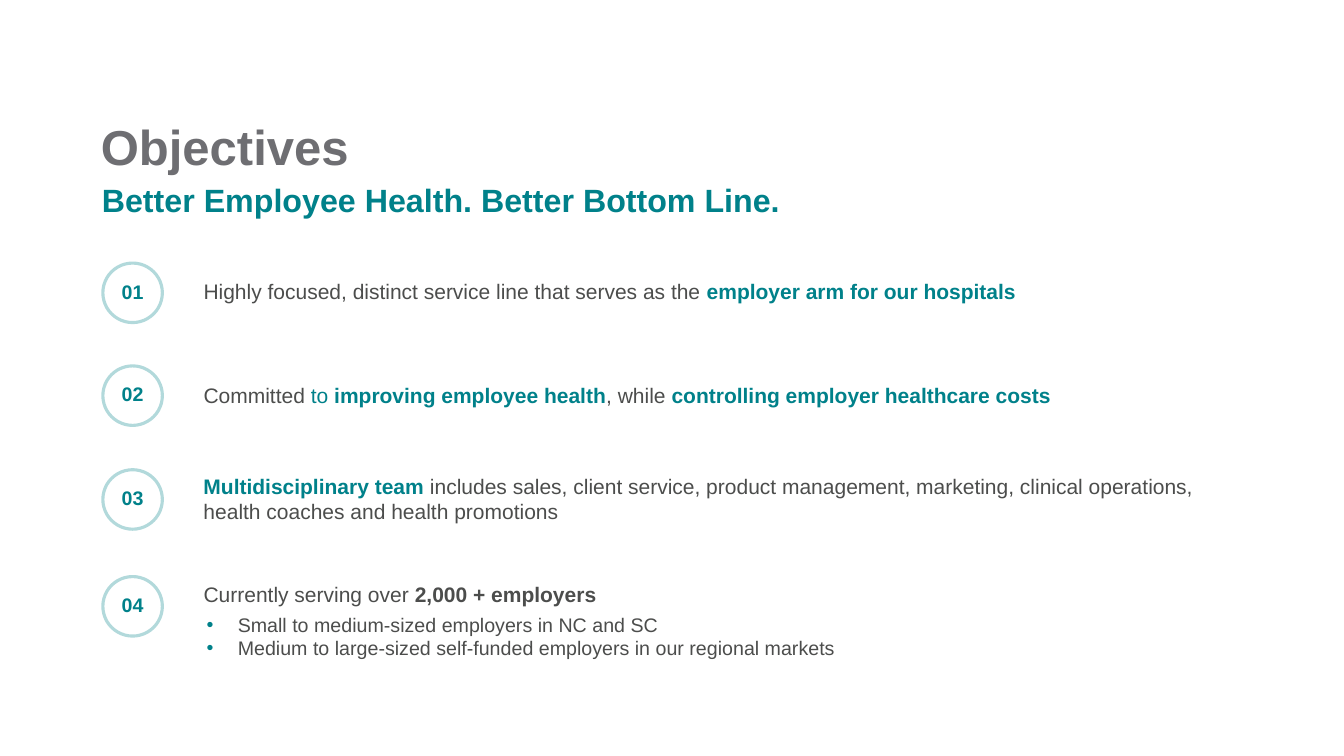
from pptx import Presentation
from pptx.dml.color import RGBColor
from pptx.enum import shapes, text
from pptx.oxml import parse_xml
from pptx.oxml.ns import nsdecls
from pptx.util import Inches, Pt

TEAL, GREY, DARK, PALE = "00818A", "6E6E72", "4C4D4C", "B2D9DB"

ROWS = [
    (2.61, 2.71, 9.85, 0.35, [
        ("Highly focused, distinct service line that serves as the ", DARK, False),
        ("employer arm for our hospitals", TEAL, True)]),
    (3.63, 3.75, 11.09, 0.35, [
        ("Committed ", DARK, False),
        ("to ", TEAL, False),
        ("improving employee health", TEAL, True),
        (", while ", DARK, False),
        ("controlling employer healthcare costs", TEAL, True)]),
    (4.66, 4.65, 10.46, 0.61, [
        ("Multidisciplinary team ", TEAL, True),
        ("includes sales, client service, product management, marketing, "
         "clinical operations, health coaches and health promotions", DARK, False)]),
    (5.72, 5.72, 5.58, 0.35, [
        ("Currently serving over ", DARK, False),
        ("2,000 + employers", DARK, True)]),
]

MARKETS = [
    "Small to medium-sized employers in NC and SC",
    "Medium to large-sized self-funded employers in our regional markets",
]


def color(code):
    return RGBColor.from_string(code)


def write(para, runs, size):
    for words, code, bold in runs:
        run = para.add_run()
        run.text = words
        run.font.name = "Arial"
        run.font.size = Pt(size)
        run.font.bold = bold
        run.font.color.rgb = color(code)


def textbox(slide, x, y, w, h):
    frame = slide.shapes.add_textbox(Inches(x), Inches(y), Inches(w), Inches(h)).text_frame
    frame.word_wrap = True
    return frame


def heading(frame, words, size, code, anchor):
    frame.margin_left = frame.margin_right = frame.margin_top = frame.margin_bottom = 0
    frame.word_wrap = True
    frame.auto_size = text.MSO_AUTO_SIZE.NONE
    frame.vertical_anchor = anchor
    para = frame.paragraphs[0]
    para.alignment = text.PP_ALIGN.LEFT
    para.line_spacing = 0.9
    write(para, [(words, code, True)], size)


def header(slide, x, y, w):
    title = slide.shapes.title
    title.left, title.top = Inches(x), Inches(y)
    title.width, title.height = Inches(w), Inches(0.64)
    heading(title.text_frame, "Objectives", 35, GREY, text.MSO_ANCHOR.MIDDLE)
    heading(textbox(slide, x + 0.01, y + 0.67, w, 0.28),
            "Better Employee Health. Better Bottom Line.", 23, TEAL, text.MSO_ANCHOR.TOP)


def badge(slide, x, y, label):
    ring = slide.shapes.add_shape(shapes.MSO_SHAPE.OVAL, Inches(x), Inches(y),
                                  Inches(0.59), Inches(0.59))
    ring.shadow.inherit = False
    ring.fill.background()
    ring.line.color.rgb = color(PALE)
    ring.line.width = Pt(2.25)
    frame = ring.text_frame
    frame.word_wrap = False
    frame.vertical_anchor = text.MSO_ANCHOR.MIDDLE
    para = frame.paragraphs[0]
    para.alignment = text.PP_ALIGN.CENTER
    para.line_spacing = 0.9
    write(para, [(label, TEAL, True)], 14)


def bullets(slide, x, y, w, h, items):
    frame = textbox(slide, x, y, w, h)
    for index, item in enumerate(items):
        para = frame.paragraphs[0] if index == 0 else frame.add_paragraph()
        para.level = 1
        props = para._p.get_or_add_pPr()
        props.set("marL", str(Inches(0.69)))
        props.set("indent", str(Inches(-0.31)))
        for tag in (f'<a:buClr {nsdecls("a")}><a:srgbClr val="{TEAL}"/></a:buClr>',
                    f'<a:buFont {nsdecls("a")} typeface="Arial"/>',
                    f'<a:buChar {nsdecls("a")} char="•"/>'):
            props.append(parse_xml(tag))
        write(para, [(item, DARK, False)], 14)


def main():
    deck = Presentation()
    deck.slide_width, deck.slide_height = Inches(13.33), Inches(7.5)
    slide = deck.slides.add_slide(deck.slide_layouts[5])
    header(slide, 1, 1.16, 12)
    for number, (top, y, w, h, runs) in enumerate(ROWS, 1):
        badge(slide, 1.02, top, f"{number:02}")
        write(textbox(slide, 1.92, y, w, h).paragraphs[0], runs, 15)
    bullets(slide, 1.57, 6.03, 10.63, 0.57, MARKETS)
    deck.save("out.pptx")


if __name__ == "__main__":
    main()
